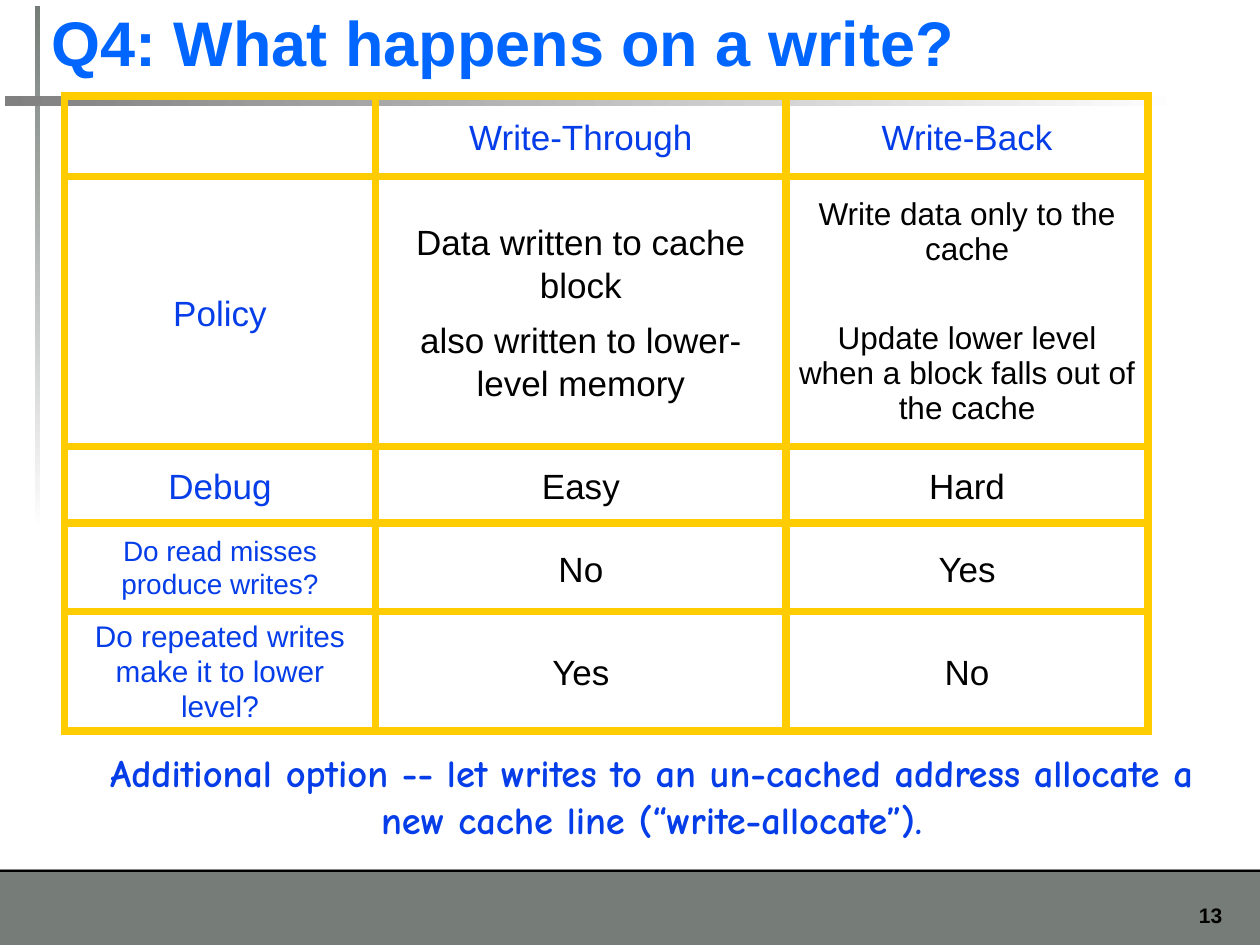
from dataclasses import dataclass

from lxml import etree
from pptx import Presentation
from pptx.dml.color import RGBColor
from pptx.enum.shapes import MSO_SHAPE
from pptx.enum.text import MSO_ANCHOR, MSO_AUTO_SIZE, PP_ALIGN
from pptx.oxml.ns import qn
from pptx.util import Cm, Pt

LEFT, CENTER, RIGHT = PP_ALIGN.LEFT, PP_ALIGN.CENTER, PP_ALIGN.RIGHT
TOP, MIDDLE, BOTTOM = MSO_ANCHOR.TOP, MSO_ANCHOR.MIDDLE, MSO_ANCHOR.BOTTOM
NO_AUTOFIT = MSO_AUTO_SIZE.NONE
RECTANGLE = MSO_SHAPE.RECTANGLE
TITLE_ONLY = 5
DOWNWARD, RIGHTWARD = 270, 0


@dataclass(frozen=True)
class Theme:
    title: str = "0066FF"
    accent: str = "053DE8"
    text: str = "000000"
    band: str = "767D79"
    rule: str = "808080"
    paper: str = "FFFFFF"
    border: str = "FFCC00"
    border_pt: int = 5
    font: str = "Arial"
    note_font: str = "Comic Neue"
    title_size: int = 36
    note_size: int = 22
    cell_size: int = 20
    number_size: int = 12


@dataclass(frozen=True)
class Entry:
    """Text of one table cell with its type size and line pitch in points."""
    lines: tuple = ()
    size: int = Theme.cell_size
    pitch: int = 25
    gap: int = 6


class SlideBuilder:
    def __init__(self, slide, theme):
        self.slide = slide
        self.theme = theme

    def style(self, paragraph, size, color, align, font=None, bold=False):
        paragraph.alignment = align
        paragraph.font.name = font or self.theme.font
        paragraph.font.size = Pt(size)
        paragraph.font.bold = bold
        paragraph.font.color.rgb = RGBColor.from_string(color)

    def bar(self, left, top, width, height, color, fade=None):
        bar = self.slide.shapes.add_shape(
            RECTANGLE, Cm(left), Cm(top), Cm(width), Cm(height))
        bar.shadow.inherit = False
        bar.line.fill.background()
        if fade is None:
            bar.fill.solid()
            bar.fill.fore_color.rgb = RGBColor.from_string(color)
            return
        bar.fill.gradient()
        bar.fill.gradient_angle = fade
        for stop, shade in zip(bar.fill.gradient_stops, (color, self.theme.paper)):
            stop.color.rgb = RGBColor.from_string(shade)

    def title(self, text, left, top, width, height):
        title = self.slide.shapes.title
        title.left, title.top = Cm(left), Cm(top)
        title.width, title.height = Cm(width), Cm(height)
        frame = title.text_frame
        frame.text = text
        frame.auto_size = NO_AUTOFIT
        frame.vertical_anchor = BOTTOM
        frame.margin_left = Cm(0.33)
        self.style(frame.paragraphs[0], self.theme.title_size,
                   self.theme.title, LEFT, bold=True)

    def text(self, text, left, top, width, height, size, color, align,
             font=None, margin=0.0):
        box = self.slide.shapes.add_textbox(
            Cm(left), Cm(top), Cm(width), Cm(height))
        frame = box.text_frame
        frame.word_wrap = True
        frame.vertical_anchor = TOP
        frame.margin_left = frame.margin_right = Cm(margin)
        frame.margin_top = frame.margin_bottom = Cm(margin / 2)
        frame.text = text
        self.style(frame.paragraphs[0], size, color, align, font, bold=True)

    def cell_border(self, cell):
        properties = cell._tc.get_or_add_tcPr()
        for position, side in enumerate(("lnL", "lnR", "lnT", "lnB")):
            line = etree.Element(qn(f"a:{side}"), w=str(Pt(self.theme.border_pt)))
            fill = etree.SubElement(line, qn("a:solidFill"))
            etree.SubElement(fill, qn("a:srgbClr"), val=self.theme.border)
            properties.insert(position, line)

    def fill_cell(self, cell, entry, color):
        cell.fill.background()
        cell.vertical_anchor = MIDDLE
        cell.margin_left = cell.margin_right = Cm(0.23)
        self.cell_border(cell)
        cell.text = "\n".join(entry.lines)
        for index, paragraph in enumerate(cell.text_frame.paragraphs):
            self.style(paragraph, entry.size, color, CENTER)
            paragraph.line_spacing = Pt(entry.pitch)
            if index:
                paragraph.space_before = Pt(entry.gap)

    def table(self, rows, left, top, widths, heights):
        table = self.slide.shapes.add_table(
            len(heights), len(widths), Cm(left), Cm(top),
            Cm(sum(widths)), Cm(sum(heights))).table
        table.first_row = table.horz_banding = False
        for column, width in zip(table.columns, widths):
            column.width = Cm(width)
        for row, height in zip(table.rows, heights):
            row.height = Cm(height)
        for r, entries in enumerate(rows):
            for c, entry in enumerate(entries):
                is_heading = r == 0 or c == 0
                color = self.theme.accent if is_heading else self.theme.text
                self.fill_cell(table.cell(r, c), entry, color)


COMPARISON = (
    (Entry(), Entry(("Write-Through",)), Entry(("Write-Back",))),
    (Entry(("Policy",)),
     Entry(("Data written to cache block", "also written to lower-level memory")),
     Entry(("Write data only to the cache",
            "Update lower level when a block falls out of the cache"),
           size=18, pitch=20, gap=31)),
    (Entry(("Debug",)), Entry(("Easy",)), Entry(("Hard",))),
    (Entry(("Do read misses produce writes?",), size=16, pitch=19),
     Entry(("No",)), Entry(("Yes",))),
    (Entry(("Do repeated writes make it to lower level?",), size=17, pitch=20),
     Entry(("Yes",)), Entry(("No",))),
)


def main():
    theme = Theme()
    deck = Presentation()
    deck.slide_width, deck.slide_height = Cm(25.4), Cm(19.05)
    slide = deck.slides.add_slide(deck.slide_layouts[TITLE_ONLY])
    builder = SlideBuilder(slide, theme)

    # Footer band with the page number
    builder.bar(0, 17.53, 25.4, 1.52, theme.band)
    builder.bar(0, 17.53, 25.4, 0.05, theme.text)
    builder.text("13", 23.29, 18.06, 1.6, 0.76, theme.number_size,
                 theme.text, RIGHT, margin=0.25)

    # Crossed fading rules behind the title
    builder.bar(0.71, 0.13, 0.1, 10.59, theme.band, fade=DOWNWARD)
    builder.bar(0.1, 1.93, 23.8, 0.2, theme.rule, fade=RIGHTWARD)
    builder.title("Q4: What happens on a write?", 0.71, -0.08, 24.41, 1.8)

    # Comparison of the two write policies
    builder.table(COMPARISON, 1.3, 1.93, widths=(6.27, 8.28, 7.29),
                  heights=(1.63, 5.44, 1.55, 1.78, 2.41))

    # Closing remark
    builder.text("Additional option -- let writes to an un-cached address "
                 "allocate a new cache line (“write-allocate”).",
                 1.5, 15.11, 23.27, 1.88, theme.note_size, theme.accent,
                 CENTER, font=theme.note_font)

    deck.save("out.pptx")


if __name__ == "__main__":
    main()
